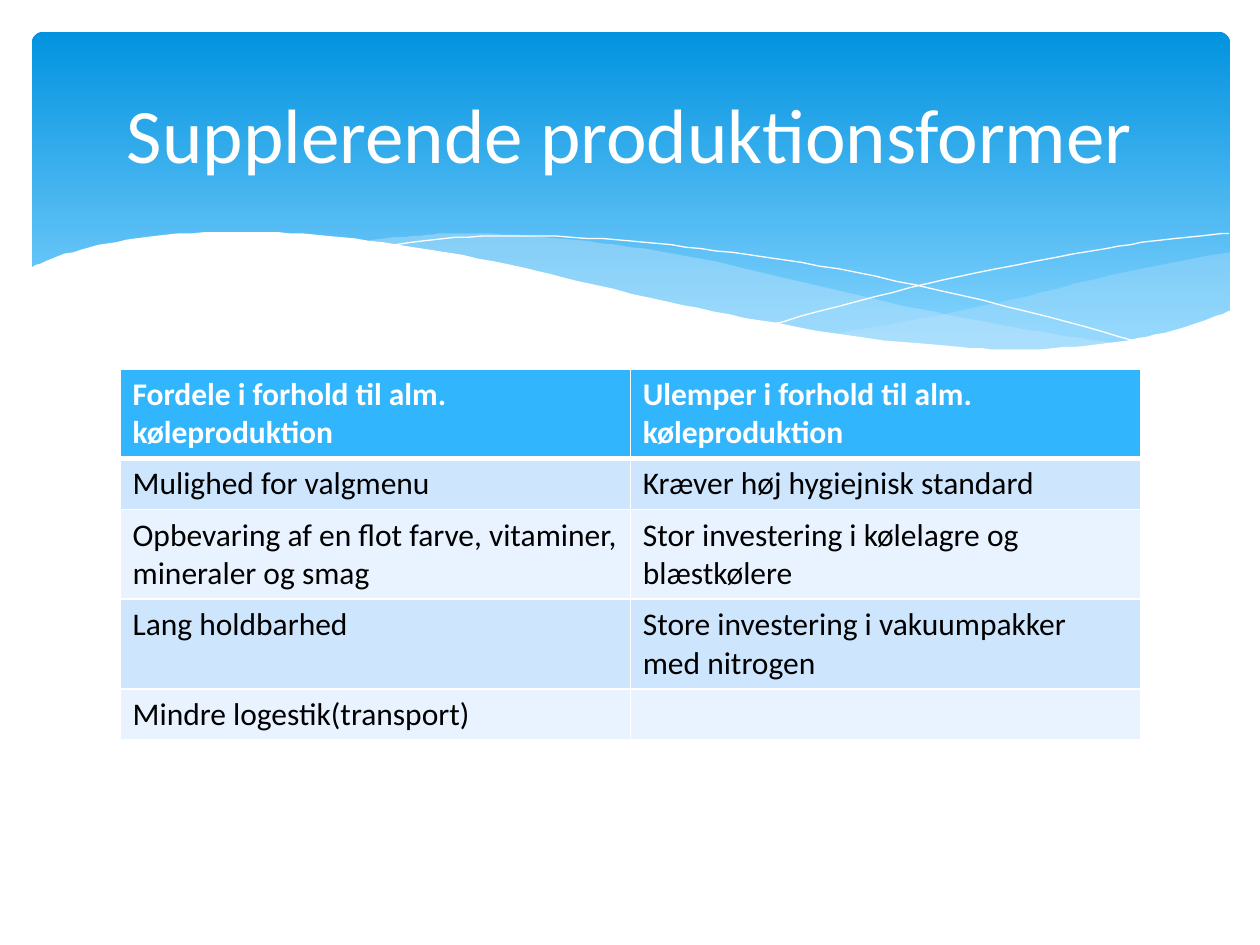
from lxml import etree
from pptx import Presentation
from pptx.dml.color import RGBColor
from pptx.enum.shapes import MSO_SHAPE
from pptx.enum.text import MSO_ANCHOR, PP_ALIGN
from pptx.oxml.ns import qn
from pptx.util import Cm, Pt

ROUNDED = MSO_SHAPE.ROUNDED_RECTANGLE
MIDDLE = MSO_ANCHOR.MIDDLE
CENTER = PP_ALIGN.CENTER
FONT = "Calibri"
WHITE = "FFFFFF"
MIST = "C6E7FC"
WAVE_UNIT = Cm(0.0254)
CURVE_STEPS = 6

MIDDLE_CREST = [(263, 7), (305, 3), (338, 1), (397, 3), (466, 10), (532, 21),
                (606, 38), (683, 56), (752, 70), (814, 81), (870, 89)]
MIDDLE_TROUGH = [(870, 89), (825, 93), (784, 94), (725, 92), (657, 84), (578, 71),
                 (507, 56), (426, 38), (360, 23), (300, 12), (263, 7)]
RIGHT_CREST = [(638, 81), (706, 69), (782, 53), (838, 39), (898, 26), (953, 16)]
RIGHT_TROUGH = [(953, 63), (919, 75), (874, 86), (821, 93), (769, 93), (709, 90), (638, 81)]
FALLING_LINE = [(286, 11), (330, 5), (393, 3), (466, 6), (533, 13), (613, 24),
                (704, 42), (808, 67), (884, 88)]
RISING_LINE = [(590, 73), (672, 51), (753, 32), (843, 15), (901, 6), (952, 1)]
WHITE_CREST = [(0, 29), (23, 19), (62, 9), (109, 2), (170, 0), (227, 2), (293, 10),
               (368, 23), (424, 36), (506, 55), (580, 70), (665, 84), (738, 91),
               (786, 93), (840, 90), (887, 83), (927, 72), (954, 62)]
WHITE_BASE = [(954, 145), (0, 145)]

COMPARISON = [
    ("Fordele i forhold til alm. køleproduktion", "Ulemper i forhold til alm. køleproduktion"),
    ("Mulighed for valgmenu", "Kræver høj hygiejnisk standard"),
    ("Opbevaring af en flot farve, vitaminer, mineraler og smag",
     "Stor investering i kølelagre og blæstkølere"),
    ("Lang holdbarhed", "Store investering i vakuumpakker med nitrogen"),
    ("Mindre logestik(transport)", ""),
]


def color(hex_code):
    return RGBColor.from_string(hex_code)


def style_text(paragraph, size, hex_code, bold=False):
    for run in paragraph.runs:
        run.font.name = FONT
        run.font.size = Pt(size)
        run.font.bold = bold
        run.font.color.rgb = color(hex_code)


def smooth(knots):
    padded = [knots[0], *knots, knots[-1]]
    curve = [knots[0]]
    for before, start, end, after in zip(padded, padded[1:], padded[2:], padded[3:]):
        for step in range(1, CURVE_STEPS + 1):
            t = step / CURVE_STEPS
            curve.append(tuple(
                (2 * b + (c - a) * t + (2 * a - 5 * b + 4 * c - d) * t ** 2
                 + (3 * b - a - 3 * c + d) * t ** 3) / 2
                for a, b, c, d in zip(before, start, end, after)))
    return curve


def draw_outline(slide, left, top, points, close):
    builder = slide.shapes.build_freeform(*points[0], scale=WAVE_UNIT)
    builder.add_line_segments(points[1:], close=close)
    outline = builder.convert_to_shape(left, top)
    outline.shadow.inherit = False
    return outline


def add_wave(slide, left, top, points, hex_code, opacity=100):
    wave = draw_outline(slide, left, top, points, True)
    wave.fill.solid()
    wave.fill.fore_color.rgb = color(hex_code)
    wave.line.fill.background()
    if opacity < 100:
        tint = wave._element.spPr.find(qn("a:solidFill"))[0]
        etree.SubElement(tint, qn("a:alpha"), val=str(opacity * 1000))


def add_wave_line(slide, left, top, points):
    wave_line = draw_outline(slide, left, top, points, False)
    wave_line.fill.background()
    wave_line.line.color.rgb = color(WHITE)
    wave_line.line.width = Pt(0)


def add_banner(slide, left, top, width, height):
    panel = slide.shapes.add_shape(ROUNDED, left, top, width, height)
    panel.adjustments[0] = 0.034
    panel.shadow.inherit = False
    panel.line.fill.background()
    panel.fill.gradient()
    panel.fill.gradient_angle = 270
    for stop, position, shade in zip(panel.fill.gradient_stops, (0, 0.9), ("0293E0", "83D3FE")):
        stop.position = position
        stop.color.rgb = color(shade)

    wave_left, wave_top = left - Cm(0.05), top + Cm(4.04)
    add_wave(slide, wave_left, wave_top, smooth(RIGHT_CREST) + smooth(RIGHT_TROUGH), MIST, 29)
    add_wave(slide, wave_left, wave_top, smooth(MIDDLE_CREST) + smooth(MIDDLE_TROUGH), MIST, 40)
    for knots in (FALLING_LINE, RISING_LINE):
        add_wave_line(slide, wave_left, wave_top, smooth(knots))
    add_wave(slide, wave_left, wave_top, smooth(WHITE_CREST) + WHITE_BASE, WHITE)


def add_title(slide, left, top, width, height):
    title = slide.shapes.add_textbox(left, top, width, height).text_frame
    title.word_wrap = True
    title.vertical_anchor = MIDDLE
    title.text = "Supplerende produktionsformer"
    title.paragraphs[0].alignment = CENTER
    style_text(title.paragraphs[0], 44, WHITE)


def set_borders(cell, bottom_width, top_width):
    properties = cell._tc.get_or_add_tcPr()
    widths = {"a:lnL": 1, "a:lnR": 1, "a:lnT": top_width, "a:lnB": bottom_width}
    for index, (side, width) in enumerate(widths.items()):
        border = etree.Element(qn(side), w=str(Pt(width)))
        fill = etree.SubElement(border, qn("a:solidFill"))
        etree.SubElement(fill, qn("a:srgbClr"), val=WHITE)
        properties.insert(index, border)


def add_comparison(slide, left, top, width, row_height):
    row_count, column_count = len(COMPARISON), len(COMPARISON[0])
    table = slide.shapes.add_table(
        row_count, column_count, left, top, width, row_height * row_count).table
    for row, entries in enumerate(COMPARISON):
        header = row == 0
        band = "31B6FD" if header else ("E8F3FF", "CEE5FE")[row % 2]
        for column, entry in enumerate(entries):
            cell = table.cell(row, column)
            cell.text_frame.text = entry
            style_text(cell.text_frame.paragraphs[0], 18, WHITE if header else "000000", header)
            cell.fill.solid()
            cell.fill.fore_color.rgb = color(band)
            set_borders(cell, 3 if header else 1, 3 if row == 1 else 1)


def main():
    deck = Presentation()
    deck.slide_width, deck.slide_height = Cm(25.4), Cm(19.05)
    slide = deck.slides.add_slide(deck.slide_layouts[6])
    add_banner(slide, Cm(0.64), Cm(0.64), Cm(24.16), Cm(6.86))
    add_comparison(slide, Cm(2.42), Cm(7.44), Cm(20.57), Cm(1.03))
    add_title(slide, Cm(1.27), Cm(0.94), Cm(22.86), Cm(3.48))
    deck.save("out.pptx")


if __name__ == "__main__":
    main()
